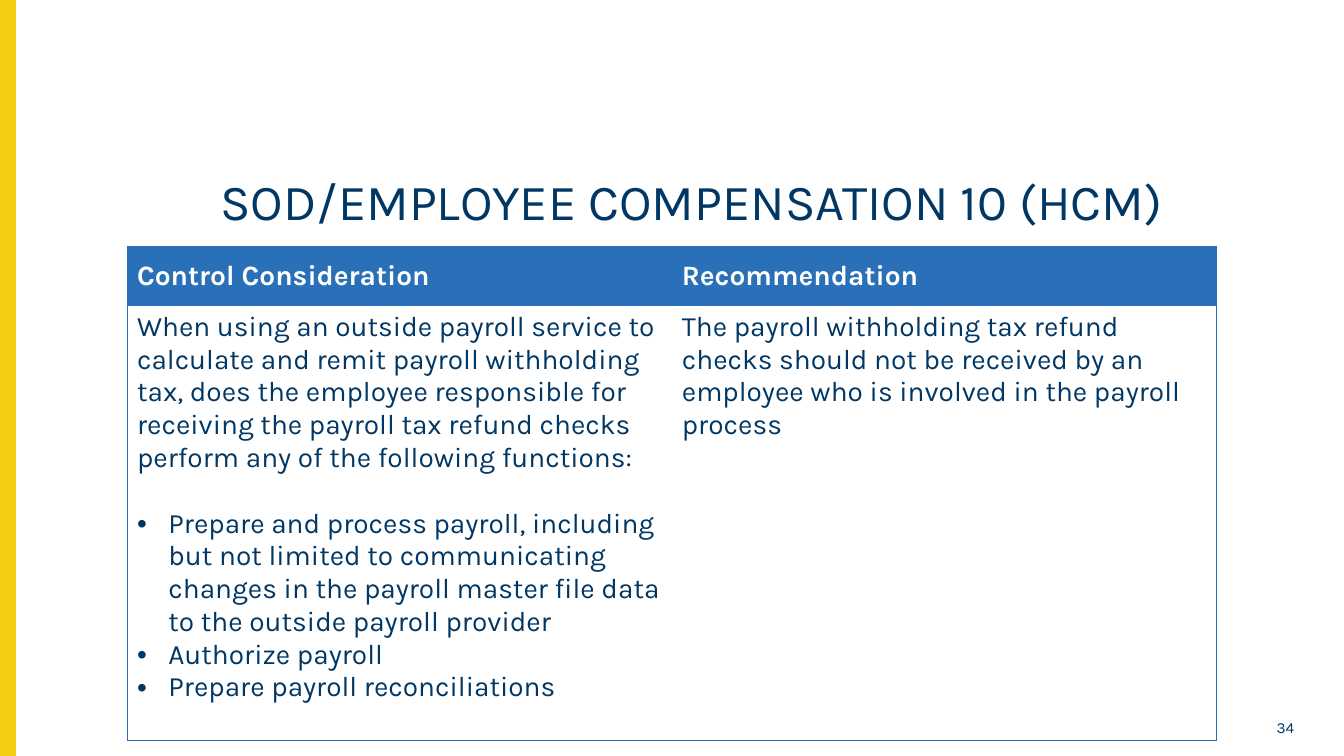
"""Builds the payroll segregation-of-duties slide with its control table."""
from lxml import etree
from pptx import Presentation
from pptx.dml.color import RGBColor
from pptx.enum import shapes, text
from pptx.oxml import ns
from pptx.util import Cm, Pt

NAVY = RGBColor(0x00, 0x37, 0x64)
BLUE = RGBColor(0x2A, 0x70, 0xB8)
YELLOW = RGBColor(0xF4, 0xCE, 0x12)
WHITE = RGBColor(0xFF, 0xFF, 0xFF)

HEADINGS = ["Control Consideration", "Recommendation"]
QUESTION = (
    "When using an outside payroll service to calculate and remit payroll "
    "withholding tax, does the employee responsible for receiving the payroll "
    "tax refund checks perform any of the following functions:"
)
FUNCTIONS = [
    "Prepare and process payroll, including but not limited to communicating "
    "changes in the payroll master file data to the outside payroll provider",
    "Authorize payroll",
    "Prepare payroll reconciliations",
]
ADVICE = (
    "The payroll withholding tax refund checks should not be received by an "
    "employee who is involved in the payroll process"
)


class SlideBuilder:
    """Holds the type style and the slide being filled."""

    font_name = "Karla"
    body_size = 20

    def __init__(self, deck):
        self.deck = deck
        self.slide = deck.slides.add_slide(deck.slide_layouts[5])

    def style(self, paragraph, size, color=NAVY, bold=False):
        font = paragraph.font
        font.name, font.size, font.bold = self.font_name, Pt(size), bold
        font.color.rgb = color

    def side_band(self, width):
        band = self.slide.shapes.add_shape(
            shapes.MSO_SHAPE.RECTANGLE, 0, 0, width, self.deck.slide_height)
        band.shadow.inherit = False
        band.fill.solid()
        band.fill.fore_color.rgb = YELLOW
        band.line.color.rgb = YELLOW
        band.line.width = Pt(1)

    def title(self, wording, left, top, width, height):
        title = self.slide.shapes.title
        title.left, title.top, title.width, title.height = left, top, width, height
        frame = title.text_frame
        frame.text = wording
        frame.auto_size = text.MSO_AUTO_SIZE.NONE
        frame.vertical_anchor = text.MSO_ANCHOR.TOP
        heading = frame.paragraphs[0]
        heading.alignment = text.PP_ALIGN.CENTER
        heading.line_spacing = 0.9
        self.style(heading, 36)

    def page_number(self, number, left, top, width, height):
        frame = self.slide.shapes.add_textbox(left, top, width, height).text_frame
        frame.word_wrap = True
        frame.vertical_anchor = text.MSO_ANCHOR.MIDDLE
        frame.text = number
        frame.paragraphs[0].alignment = text.PP_ALIGN.RIGHT
        self.style(frame.paragraphs[0], 11)

    def bullet(self, paragraph):
        properties = paragraph._p.get_or_add_pPr()
        properties.set("marL", str(Cm(0.79)))
        properties.set("indent", str(-Cm(0.79)))
        etree.SubElement(properties, ns.qn("a:buFont"), typeface="Arial")
        etree.SubElement(properties, ns.qn("a:buChar"), char="•")

    def borders(self, cell, visible):
        properties = cell._tc.get_or_add_tcPr()
        for position, side in enumerate("LRTB"):
            line = etree.Element(ns.qn(f"a:ln{side}"), w=str(Pt(0.5)))
            if side in visible:
                fill = etree.SubElement(line, ns.qn("a:solidFill"))
                etree.SubElement(fill, ns.qn("a:srgbClr"), val=str(BLUE))
            else:
                etree.SubElement(line, ns.qn("a:noFill"))
            properties.insert(position, line)

    def control_table(self, left, top, column_width, row_heights):
        table = self.slide.shapes.add_table(
            2, 2, left, top, column_width * 2, sum(row_heights)).table
        table.horz_banding = False
        for row, height in zip(table.rows, row_heights):
            row.height = height
        contents = [[QUESTION, *FUNCTIONS], [ADVICE]]
        for index, (heading, lines) in enumerate(zip(HEADINGS, contents)):
            table.columns[index].width = column_width
            outer_side = "LR"[index]

            header = table.cell(0, index)
            header.text = heading
            header.vertical_anchor = text.MSO_ANCHOR.MIDDLE
            header.fill.solid()
            header.fill.fore_color.rgb = BLUE
            self.style(header.text_frame.paragraphs[0], self.body_size, WHITE, True)
            self.borders(header, outer_side + "TB")

            body = table.cell(1, index)
            body.text = "\n".join(lines)
            body.fill.background()
            for order, paragraph in enumerate(body.text_frame.paragraphs):
                if order == 1:
                    paragraph.space_before = Pt(23.4)
                if order:
                    self.bullet(paragraph)
                self.style(paragraph, self.body_size)
            self.borders(body, outer_side + "TB")


def main():
    deck = Presentation()
    deck.slide_width, deck.slide_height = Cm(33.87), Cm(19.05)
    builder = SlideBuilder(deck)
    builder.side_band(Cm(0.38))
    builder.control_table(Cm(3.2), Cm(6.2), Cm(13.73), [Cm(1.5), Cm(10.96)])
    builder.title("SOD/EMPLOYEE COMPENSATION 10 (HCM)",
                  Cm(1.98), Cm(4.32), Cm(30.89), Cm(2.21))
    builder.page_number("34", Cm(31.14), Cm(18.01), Cm(1.73), Cm(0.66))
    deck.save("out.pptx")


if __name__ == "__main__":
    main()
